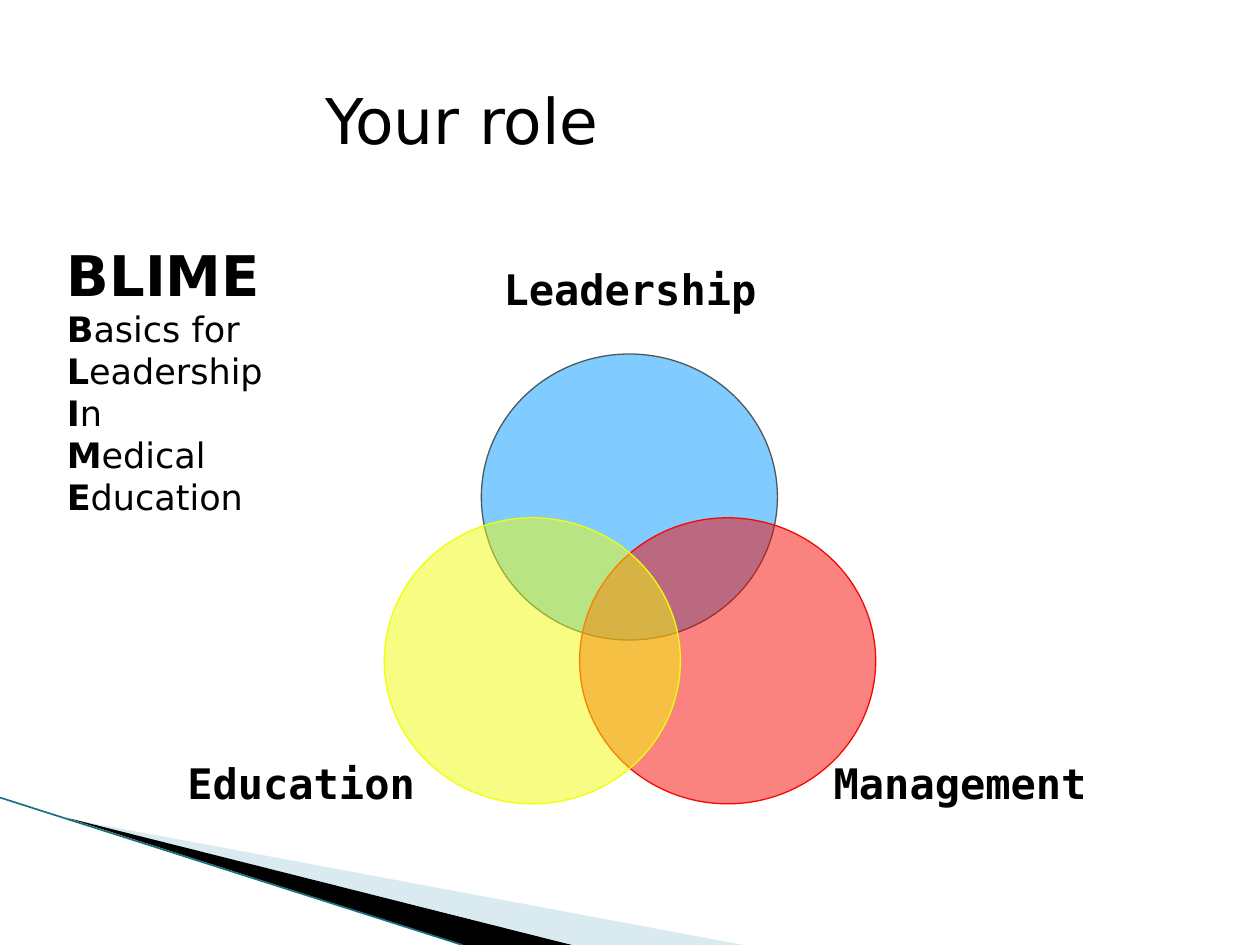
from lxml.etree import SubElement
from pptx import Presentation
from pptx.dml.color import RGBColor
from pptx.enum.shapes import MSO_CONNECTOR, MSO_SHAPE
from pptx.enum.text import MSO_ANCHOR, MSO_AUTO_SIZE, PP_ALIGN
from pptx.oxml.ns import qn
from pptx.util import Inches, Pt

COLORS = {
    "text": "000000", "wedge": "A0CBDC", "stripe": "000000", "edge": "1A7080",
    "blue": "0399FF", "blue_line": "4B595B", "red": "F60802", "yellow": "F1FD09",
}


def fill_shape(sp, color, opacity=100):
    sp.shadow.inherit = False
    sp.fill.solid()
    sp.fill.fore_color.rgb = RGBColor.from_string(COLORS[color])
    if opacity < 100:
        clr = sp._element.spPr.find(qn("a:solidFill"))[0]
        SubElement(clr, qn("a:alpha"), val=str(opacity * 1000))


def add_run(p, text, size, bold=False, font="DejaVu Sans"):
    r = p.add_run()
    r.text = text
    r.font.name = font
    r.font.size = Pt(size)
    r.font.bold = bold
    r.font.color.rgb = RGBColor.from_string(COLORS["text"])


prs = Presentation()
prs.slide_width, prs.slide_height = Inches(10), Inches(7.5)
s = prs.slides.add_slide(prs.slide_layouts[1])

# Corner decoration
wedges = [
    ("wedge", 40, [(0.55, 6.5), (5.9, 7.5), (4.56, 7.5)]),
    ("stripe", 100, [(0.53, 6.49), (4.54, 7.5), (3.68, 7.5)]),
]
for color, opacity, points in wedges:
    corners = [(Inches(x), Inches(y)) for x, y in points]
    builder = s.shapes.build_freeform(*corners[0])
    builder.add_line_segments(corners[1:], close=True)
    sp = builder.convert_to_shape()
    fill_shape(sp, color, opacity)
    sp.line.fill.background()

edge = s.shapes.add_connector(
    MSO_CONNECTOR.STRAIGHT, Inches(0), Inches(6.33), Inches(3.67), Inches(7.5))
edge.line.color.rgb = RGBColor.from_string(COLORS["edge"])
edge.line.width = Pt(0.95)
SubElement(edge._element.spPr, qn("a:effectLst"))

# Venn diagram: circle position, colours, label and label position
circles = [
    (3.82, 2.81, "blue", "blue_line", "Leadership", 3.9, 2.01),
    (4.6, 4.11, "red", "red", "Management", 6.52, 5.93),
    (3.05, 4.11, "yellow", "yellow", "Education", 1.29, 5.93),
]
for x, y, color, outline, label, label_x, label_y in circles:
    sp = s.shapes.add_shape(
        MSO_SHAPE.OVAL, Inches(x), Inches(y), Inches(2.35), Inches(2.27))
    fill_shape(sp, color, 50)
    sp.line.color.rgb = RGBColor.from_string(COLORS[outline])
    sp.line.width = Pt(0.75)

    box = s.shapes.add_textbox(
        Inches(label_x), Inches(label_y), Inches(2.2), Inches(0.57))
    tf = box.text_frame
    tf.margin_left = tf.margin_right = tf.margin_top = tf.margin_bottom = 0
    tf.vertical_anchor = MSO_ANCHOR.MIDDLE
    tf.word_wrap = False
    p = tf.paragraphs[0]
    p.alignment = PP_ALIGN.CENTER
    add_run(p, label, 24, True, "DejaVu Sans Mono")

# Title and acronym
title, body = s.shapes.title, s.placeholders[1]
for sp, x, y, w, h in [(title, 2.48, 0.6, 2.46, 0.71), (body, 0.43, 1.86, 2.05, 2.32)]:
    sp.left, sp.top, sp.width, sp.height = Inches(x), Inches(y), Inches(w), Inches(h)
    sp.text_frame.auto_size = MSO_AUTO_SIZE.NONE
    sp.text_frame.vertical_anchor = MSO_ANCHOR.TOP
    sp.text_frame.word_wrap = True

p = title.text_frame.paragraphs[0]
p.alignment = PP_ALIGN.LEFT
add_run(p, "Your role", 36)

acronym = [
    [("BLIME", 32, True)],
    [("B", 20, True), ("asics for ", 20, False), ("L", 20, True),
     ("eadership ", 20, False), ("I", 20, True), ("n", 20, False)],
    [("M", 20, True), ("edical ", 20, False), ("E", 20, True), ("ducation", 20, False)],
]
tf = body.text_frame
for i, runs in enumerate(acronym):
    p = tf.add_paragraph() if i else tf.paragraphs[0]
    p.space_before = Pt(0)
    pPr = p._p.get_or_add_pPr()
    pPr.set("marL", "0")
    pPr.set("indent", "0")
    SubElement(pPr, qn("a:buNone"))
    for text, size, bold in runs:
        add_run(p, text, size, bold)

prs.save("out.pptx")
